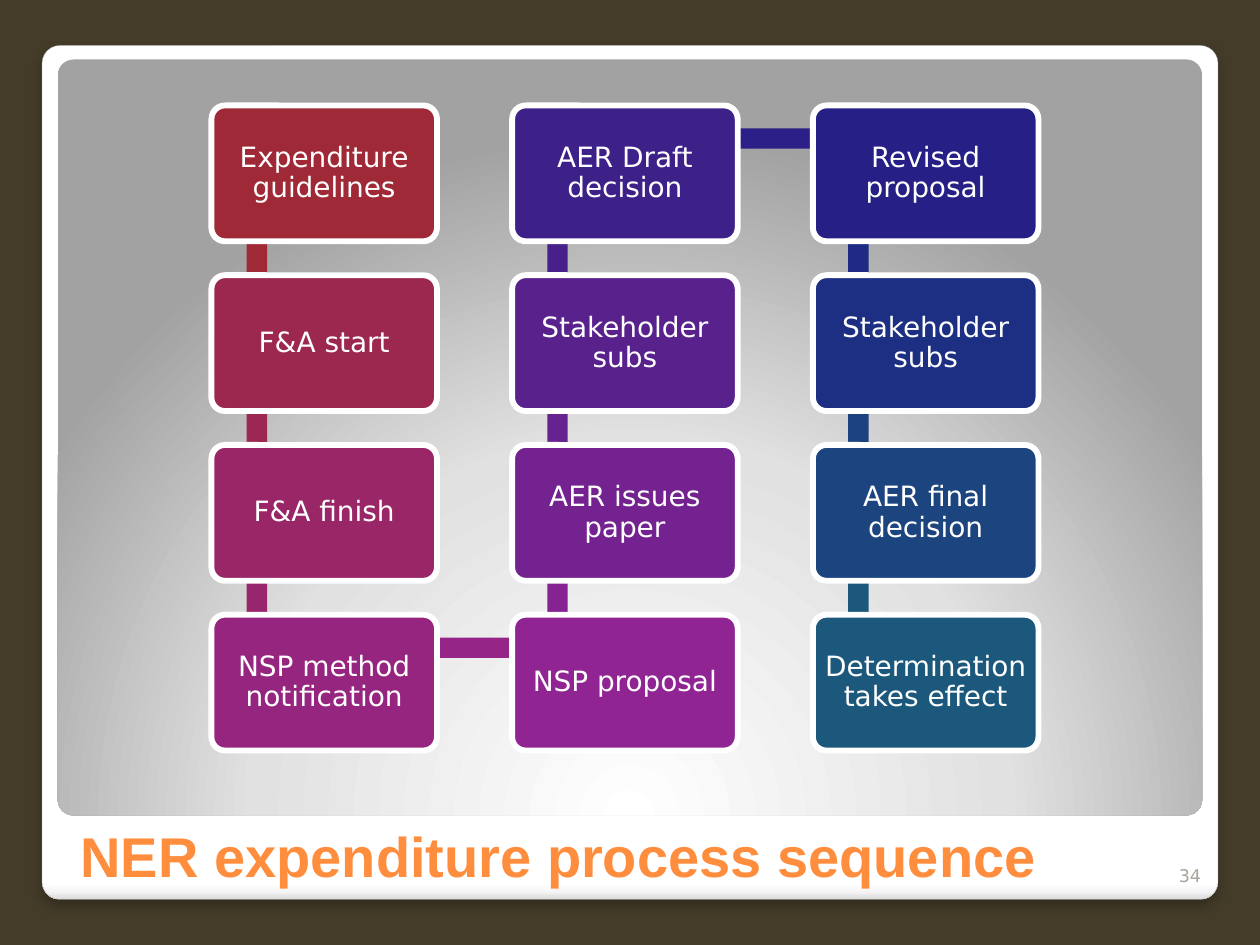
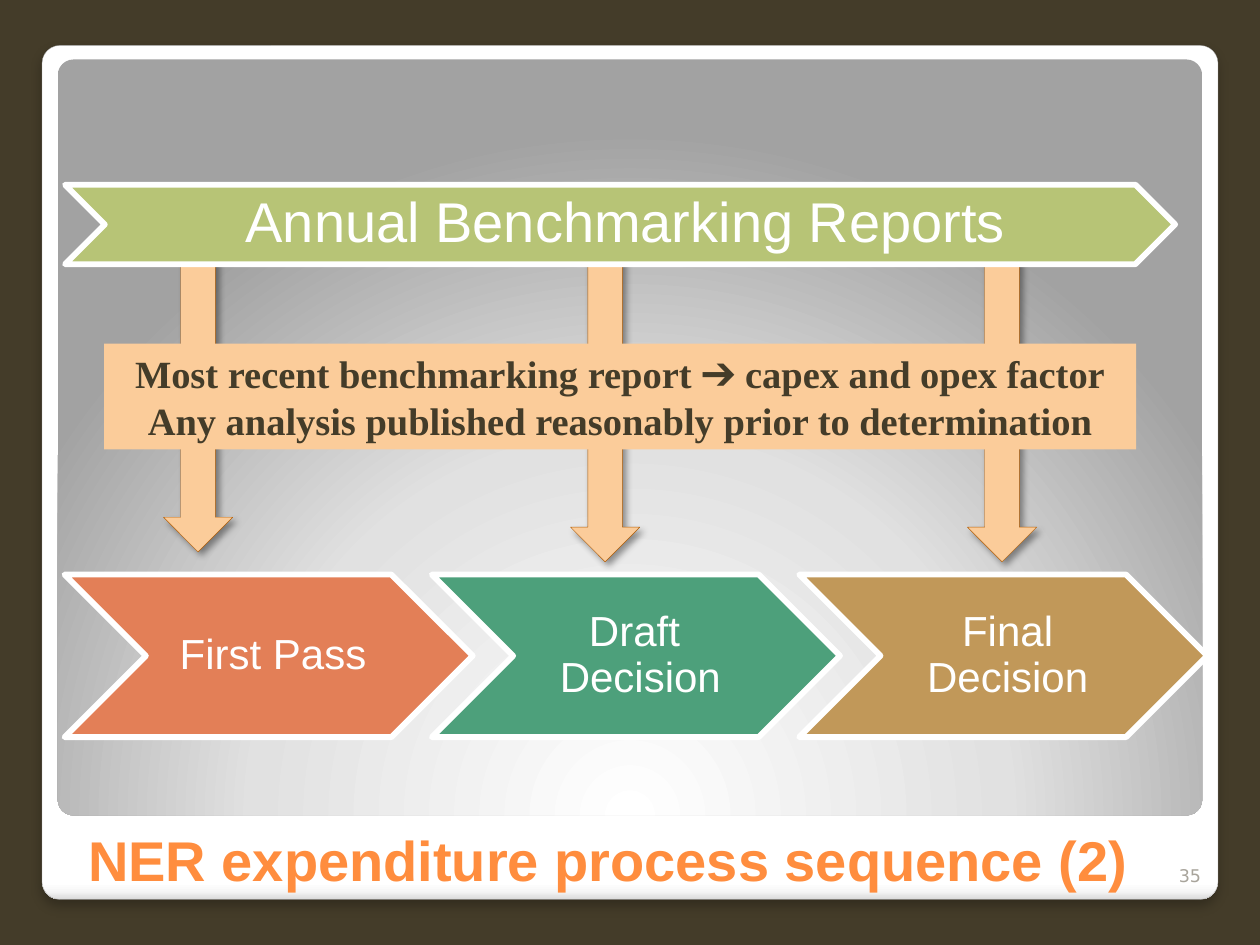
"""Build two slides on the NER expenditure process sequence."""
from collections import namedtuple

from pptx import Presentation, util as u
from pptx.dml.color import RGBColor
from pptx.enum import shapes, text
from pptx.oxml import parse_xml
from pptx.oxml.ns import nsdecls, qn

Box = namedtuple("Box", "left top width height")
Kind = shapes.MSO_SHAPE
Align = text.PP_ALIGN
Anchor = text.MSO_ANCHOR

BROWN = RGBColor(0x44, 0x3C, 0x29)
WHITE = RGBColor(0xFF, 0xFF, 0xFF)
ORANGE = RGBColor(0xFF, 0x8D, 0x3E)
NUMBER_GREY = RGBColor(0xA8, 0xA4, 0x9B)
FRAME_EDGE = RGBColor(0xA4, 0xA4, 0xA4)
PEACH = RGBColor(0xFB, 0xCC, 0x9A)
ARROW_EDGE = RGBColor(0xB2, 0x5E, 0x07)
LIME = RGBColor(0xB7, 0xC4, 0x76)
CORAL = RGBColor(0xE3, 0x7F, 0x57)
GREEN = RGBColor(0x4D, 0xA0, 0x7B)
TAN = RGBColor(0xC1, 0x98, 0x59)

SANS, ARIAL, SERIF = "DejaVu Sans", "Arial", "Times New Roman"
EDGE = 3.35

FRAME = Box(24, 26, 672, 488)
FRAME_STOPS = [(0, "FFFFFF"), (98, "FFFFFF"), (99, "F7F7F7"), (100, "DADADA")]
FRAME_SHADE = '<a:lin ang="5400000" scaled="0"/>'
PANEL_STOPS = [(0, "FFFFFF"), (55, "E1E1E1"), (100, "A2A2A2")]
PANEL_SHADE = ('<a:path path="circle"><a:fillToRect l="50000" t="175000" '
               'r="50000" b="-75000"/></a:path>')

STEPS = [
    ("Expenditure guidelines", "9F2936", "9F2936"),
    ("F&A start", "9C284F", "9C2752"),
    ("F&A finish", "992667", "98266C"),
    ("NSP method notification", "96257F", "952586"),
    ("NSP proposal", "902493", "842391"),
    ("AER issues paper", "74228F", "66228E"),
    ("Stakeholder subs", "58218C", "48208A"),
    ("AER Draft decision", "3E2089", "2C1F87"),
    ("Revised proposal", "251F86", "1E2A83"),
    ("Stakeholder subs", "1D2F83", "1C4280"),
    ("AER final decision", "1C447F", "1B587C"),
    ("Determination takes effect", "1B587C", None),
]
ROWS, COLUMNS = 4, 3

STAGES = [("First Pass", CORAL), ("Draft \vDecision", GREEN), ("Final Decision", TAN)]
FINDINGS = ("Most recent benchmarking report ➔ capex and opex factor\n"
            "Any analysis published reasonably prior to determination")


def in_points(box):
    """Turn a box of numbers into lengths."""
    return [u.Pt(round(value, 2)) for value in box]


def add_block(page, kind, box, fill=None, edge=None, weight=EDGE):
    """Add a preset shape with a plain fill, an optional edge and no shadow."""
    block = page.shapes.add_shape(kind, *in_points(box))
    block.shadow.inherit = False
    if fill is not None:
        block.fill.solid()
        block.fill.fore_color.rgb = fill
    if edge is None:
        block.line.fill.background()
    else:
        block.line.color.rgb = edge
        block.line.width = u.Pt(weight)
    return block


def shade(block, stops, direction):
    """Fill a shape with a gradient."""
    block.fill.gradient()
    gradient = block._element.spPr.find(qn("a:gradFill"))
    for child in list(gradient):
        gradient.remove(child)
    marks = "".join(f'<a:gs pos="{place * 1000}"><a:srgbClr val="{colour}"/></a:gs>'
                    for place, colour in stops)
    fresh = parse_xml(f'<a:gradFill {nsdecls("a")}><a:gsLst>{marks}</a:gsLst>'
                      f'{direction}</a:gradFill>')
    for child in list(fresh):
        gradient.append(child)


def cast_shadow(block, opacity, blur, distance, angle):
    """Give a shape a soft black outer shadow."""
    effects = block._element.spPr.find(qn("a:effectLst"))
    effects.append(parse_xml(
        f'<a:outerShdw {nsdecls("a")} blurRad="{u.Pt(blur)}" dist="{u.Pt(distance)}" '
        f'dir="{angle * 60000}" algn="ctr" rotWithShape="0"><a:srgbClr val="000000">'
        f'<a:alpha val="{opacity * 1000}"/></a:srgbClr></a:outerShdw>'))


def write(block, words, size, font, colour, align=Align.CENTER,
          anchor=Anchor.MIDDLE, bold=False, spacing=None, insets=None):
    """Put formatted words in a shape or text box."""
    frame = block.text_frame
    frame.text = words
    frame.word_wrap = True
    frame.vertical_anchor = anchor
    if insets:
        frame.margin_left = u.Pt(insets[0])
        frame.margin_top = frame.margin_right = frame.margin_bottom = u.Pt(insets[1])
    for para in frame.paragraphs:
        para.alignment = align
        if spacing:
            para.line_spacing = spacing
        for span in para.runs:
            span.font.size = u.Pt(size)
            span.font.name = font
            span.font.bold = bold
            span.font.color.rgb = colour


def add_backdrop(page, box):
    """Draw the white frame and the shaded panel inside it."""
    frame = add_block(page, Kind.ROUNDED_RECTANGLE, box, edge=FRAME_EDGE, weight=0.16)
    shade(frame, FRAME_STOPS, FRAME_SHADE)
    cast_shadow(frame, 25, 6, 4, 90)
    panel = add_block(page, Kind.ROUNDED_RECTANGLE,
                      Box(box.left + 9, box.top + 8, box.width - 18, 432))
    shade(panel, PANEL_STOPS, PANEL_SHADE)
    for sheet in (frame, panel):
        sheet.adjustments[0] = 0.021


def add_title(page, box, words):
    """Write the slide title at the bottom of its box."""
    write(page.shapes.add_textbox(*in_points(box)), words, 32, ARIAL, ORANGE,
          Align.LEFT, Anchor.BOTTOM, bold=True)


def add_number(page, box, number):
    """Write the slide number at the bottom right."""
    write(page.shapes.add_textbox(*in_points(box)), str(number), 10, SANS,
          NUMBER_GREY, Align.RIGHT, Anchor.BOTTOM)


def add_step_grid(page, box):
    """Lay the steps out down, up and down again, linked by bars."""
    width, height, thick = 128.9, 77.6, 11.7
    column_pitch = (box.width - width) / (COLUMNS - 1)
    row_pitch = (box.height - height) / (ROWS - 1)
    corners = []
    for index in range(len(STEPS)):
        column, row = divmod(index, ROWS)
        if column % 2:
            row = ROWS - 1 - row
        corners.append((box.left + column * column_pitch, box.top + row * row_pitch))
    for index, (words, fill, link) in enumerate(STEPS):
        left, top = corners[index]
        if link:
            next_left, next_top = corners[index + 1]
            bar = Box(min(left, next_left) + 20.1, min(top, next_top) + 13,
                      abs(next_left - left) + thick, abs(next_top - top) + thick)
            add_block(page, Kind.RECTANGLE, bar, RGBColor.from_string(link))
        step = add_block(page, Kind.ROUNDED_RECTANGLE, Box(left, top, width, height),
                         RGBColor.from_string(fill), WHITE)
        step.adjustments[0] = 0.1
        write(step, words, 16, SANS, WHITE, spacing=0.9, insets=(3, 3))


def add_arrows(page, box):
    """Drop three arrows from the reports to the stages."""
    for offset, shortfall in ((0, 5.7), (232.6, 0), (459.4, 0)):
        arrow = add_block(page, Kind.DOWN_ARROW,
                          Box(box.left + offset, box.top, 39.6, box.height - shortfall),
                          PEACH, ARROW_EDGE, 0.25)
        cast_shadow(arrow, 40, 4, 3, 45)


def add_chevron(page, box, words, fill, size, insets):
    """Draw one labelled chevron."""
    chevron = add_block(page, Kind.CHEVRON, box, fill, WHITE)
    write(chevron, words, size, ARIAL, WHITE, spacing=0.9, insets=insets)


def add_stages(page, box):
    """Draw the overlapping row of stage chevrons."""
    width = box.width / (1 + 0.9 * (len(STAGES) - 1))
    for index, (words, fill) in enumerate(STAGES):
        place = Box(box.left + index * width * 0.9, box.top, width, box.height)
        add_chevron(page, place, words, fill, 24, (7.5, 2.5))


def add_findings(page, box):
    """Draw the band of findings across the arrows."""
    write(add_block(page, Kind.RECTANGLE, box, PEACH), FINDINGS, 22, SERIF, BROWN,
          bold=True)


def add_page(deck, number, title, title_box):
    """Start a slide with the shared backdrop, title and number."""
    page = deck.slides.add_slide(deck.slide_layouts[6])
    add_backdrop(page, FRAME)
    add_title(page, title_box, title)
    add_number(page, Box(657.4, 481, 36, 28.8), number)
    return page


def build_sequence(deck):
    """Build the slide of twelve linked steps."""
    page = add_page(deck, 34, "NER expenditure process sequence",
                    Box(38.9, 428.4, 644.4, 82.8))
    add_step_grid(page, Box(120.8, 60.3, 472.6, 368.6))


def build_benchmarking(deck):
    """Build the slide of reports feeding the decision stages."""
    page = add_page(deck, 35, "NER expenditure process sequence (2)",
                    Box(43.2, 451.2, 644.4, 62.6))
    add_arrows(page, Box(93.4, 145.4, 498.6, 175.7))
    add_chevron(page, Box(37.2, 105.6, 634.3, 45.4), "Annual Benchmarking Reports",
                LIME, 32, (10, 3.5))
    add_stages(page, Box(36.9, 328.3, 653, 92.9))
    add_findings(page, Box(59.5, 196.4, 589.7, 60.5))


def main():
    """Build and save the deck."""
    deck = Presentation()
    deck.slide_width, deck.slide_height = u.Pt(720), u.Pt(540)
    backdrop = deck.slide_master.background.fill
    backdrop.solid()
    backdrop.fore_color.rgb = BROWN
    build_sequence(deck)
    build_benchmarking(deck)
    deck.save("out.pptx")


if __name__ == "__main__":
    main()
